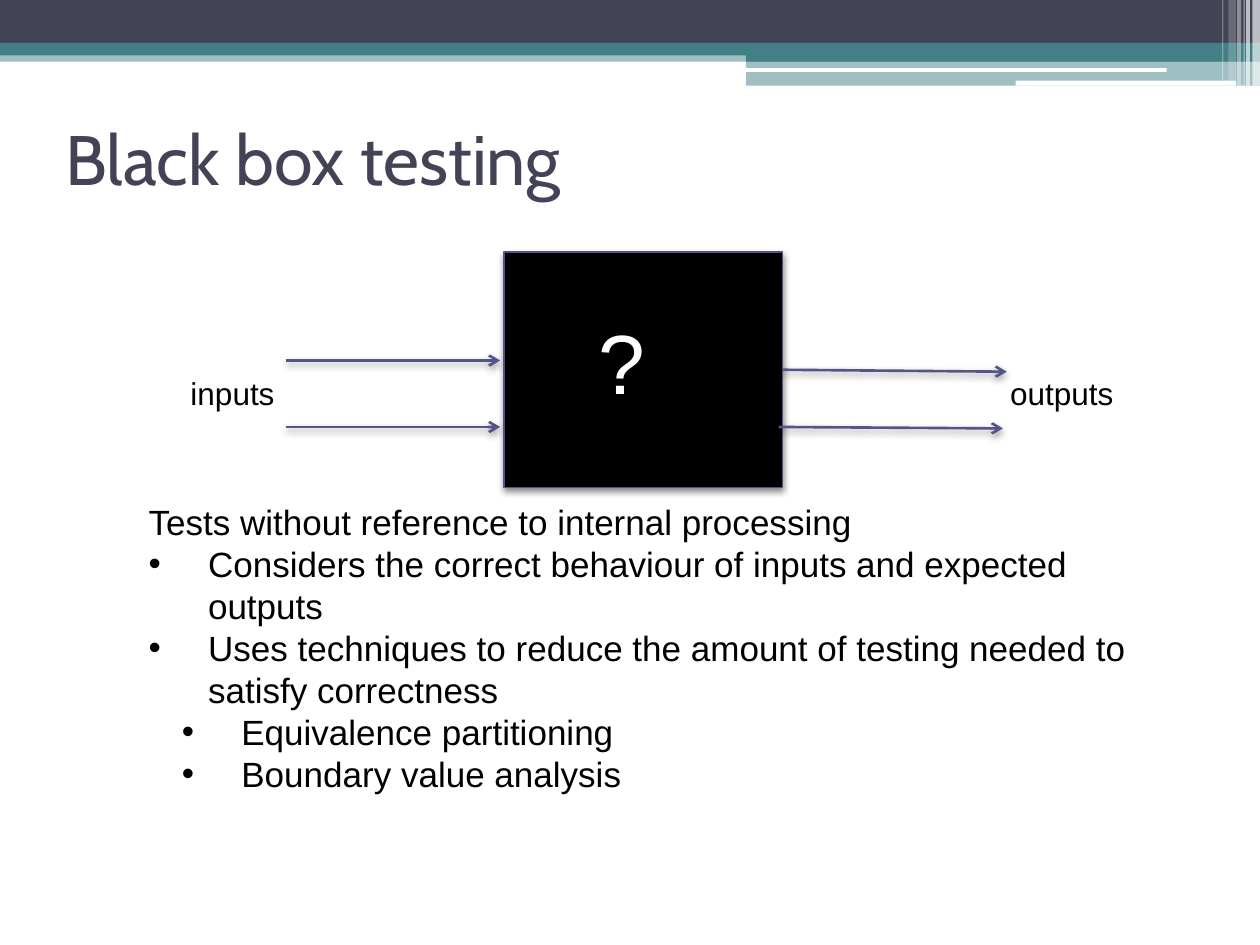
from lxml import etree
from pptx import Presentation
from pptx.dml.color import RGBColor
from pptx.enum.shapes import MSO_CONNECTOR, MSO_SHAPE
from pptx.enum.text import MSO_ANCHOR, PP_ALIGN
from pptx.oxml.ns import qn
from pptx.util import Pt

RECTANGLE, ROUNDED = MSO_SHAPE.RECTANGLE, MSO_SHAPE.ROUNDED_RECTANGLE
STRAIGHT = MSO_CONNECTOR.STRAIGHT
LEFT, CENTER = PP_ALIGN.LEFT, PP_ALIGN.CENTER
MIDDLE = MSO_ANCHOR.MIDDLE
RIGHT_SIDE = 3
NAVY, TEAL, VIOLET, WHITE, BLACK = "424456", "438086", "53548A", "FFFFFF", "000000"


def color(value):
    """Return the colour for a hex string."""
    return RGBColor.from_string(value)


def add_block(slide, box, fill, opacity=100, kind=RECTANGLE):
    """Add a borderless shape, translucent when opacity is below 100."""
    shape = slide.shapes.add_shape(kind, *map(Pt, box))
    shape.shadow.inherit = False
    shape.fill.solid()
    shape.fill.fore_color.rgb = color(fill)
    shape.line.fill.background()
    if opacity < 100:
        tone = shape.fill._xPr.find(".//" + qn("a:srgbClr"))
        etree.SubElement(tone, qn("a:alpha"), val=str(opacity * 1000))
    return shape


def add_shadow(shape, opacity, blur):
    """Give a shape or connector a soft shadow straight below it."""
    properties = shape._element.spPr
    for effects in properties.findall(qn("a:effectLst")):
        properties.remove(effects)
    effects = etree.SubElement(properties, qn("a:effectLst"))
    shadow = etree.SubElement(effects, qn("a:outerShdw"), blurRad=str(Pt(blur)),
                              dist=str(Pt(2)), dir="5400000", rotWithShape="0")
    tone = etree.SubElement(shadow, qn("a:srgbClr"), val=BLACK)
    etree.SubElement(tone, qn("a:alpha"), val=str(opacity * 1000))


def add_run(paragraph, text, size, fill=BLACK, font="Arial"):
    """Add one formatted run to a paragraph."""
    run = paragraph.add_run()
    run.text = text
    run.font.size = Pt(size)
    run.font.name = font
    run.font.color.rgb = color(fill)


def add_label(slide, box, text, size, fill=BLACK, align=LEFT):
    """Add a one-line text box."""
    frame = slide.shapes.add_textbox(*map(Pt, box)).text_frame
    frame.word_wrap = True
    frame.paragraphs[0].alignment = align
    add_run(frame.paragraphs[0], text, size, fill)


def add_arrow(slide, start, end, source=None):
    """Add an arrow, joined to the right side of a source shape if given."""
    arrow = slide.shapes.add_connector(STRAIGHT, *map(Pt, start + end))
    if source is not None:
        arrow.begin_connect(source, RIGHT_SIDE)
    arrow.line.color.rgb = color(VIOLET)
    arrow.line.width = Pt(1.5)
    etree.SubElement(arrow.line._get_or_add_ln(), qn("a:tailEnd"), type="arrow")
    add_shadow(arrow, 40, 4.1)


def add_header(slide, box):
    """Draw the banded header with its step and vertical stripes."""
    left, top, width, height = box
    step = left + 426.2
    right = left + width
    add_block(slide, (left, top + 28.8, width, 6.5), TEAL, 50)
    add_block(slide, (left, top, width, 24.5), NAVY)
    add_block(slide, (left, top + 24.5, width, 7.2), TEAL)
    add_block(slide, (step, top + 28, right - step, 7.2), TEAL)
    add_block(slide, (step, top + 34.6, right - step, 14.4), TEAL, 50)
    add_block(slide, (left + 425.5, top + 38.9, 241.2, 2.2), WHITE, kind=ROUNDED)
    add_block(slide, (left + 580.3, top + 46.1, 126, 2.9), WHITE, kind=ROUNDED)
    stripes = [(4.3, 4.3, 0, 65), (7.9, 2.2, 0, 65), (9.4, 0.7, 0, 60),
               (13, 2.2, 0, 40), (18, 4.3, 2.9, 20), (21.6, 0.7, 2.9, 30)]
    for offset, stripe_width, gap, opacity in stripes:
        add_block(slide, (right - offset, top, stripe_width, height - gap), WHITE, opacity)


def add_title(slide, box, text):
    """Place and format the title placeholder."""
    title = slide.shapes.title
    title.left, title.top, title.width, title.height = map(Pt, box)
    title.text_frame.vertical_anchor = MIDDLE
    paragraph = title.text_frame.paragraphs[0]
    paragraph.alignment = LEFT
    add_run(paragraph, text, 40, NAVY, "Cabin")


def add_diagram(slide, box):
    """Draw the black box with its inputs and outputs."""
    left, top, width, height = box
    black_box = add_block(slide, (left + 198, top, 159.1, height), BLACK)
    black_box.line.color.rgb = color(VIOLET)
    black_box.line.width = Pt(0.75)
    add_shadow(black_box, 45, 4)
    add_label(slide, (left + 226, top + 30.2, 79.2, 69.8), "?", 48, WHITE, CENTER)
    add_label(slide, (left, top + 66.2, 85.7, 28.8), "inputs", 18, align=CENTER)
    add_label(slide, (left + width - 108, top + 66.2, 108, 28.8), "outputs", 18)
    for offset in (62, 100):
        add_arrow(slide, (left + 73.4, top + offset), (left + 195.8, top + offset))
    add_arrow(slide, (left + 357.1, top + 67.3), (left + 485.3, top + 68.4), black_box)
    add_arrow(slide, (left + 355, top + 100), (left + 483.1, top + 100.8))


def add_notes_text(slide, box, lines):
    """Write paragraphs given as (level, text); level None has no bullet."""
    frame = slide.shapes.add_textbox(*map(Pt, box)).text_frame
    frame.word_wrap = True
    for index, (level, text) in enumerate(lines):
        paragraph = frame.add_paragraph() if index else frame.paragraphs[0]
        add_run(paragraph, text, 20)
        if level is not None:
            paragraph.level = level
            properties = paragraph._p.get_or_add_pPr()
            properties.set("marL", str(Pt(34 + 19 * level)))
            properties.set("indent", str(-Pt(34)))
            etree.SubElement(properties, qn("a:buFont"), typeface="Arial")
            etree.SubElement(properties, qn("a:buChar"), char="•")


def main():
    """Build and save the slide."""
    presentation = Presentation()
    presentation.slide_width, presentation.slide_height = Pt(720), Pt(540)
    slide = presentation.slides.add_slide(presentation.slide_layouts[5])
    add_header(slide, (0, 0, 720, 49))
    add_title(slide, (30.2, 48.2, 648, 84.2), "Black box testing")
    add_diagram(slide, (90, 144, 588.2, 134.6))
    add_notes_text(slide, (77.8, 282.2, 581.8, 220.3), [
        (None, "Tests without reference to internal processing"),
        (0, "Considers the correct behaviour of inputs and expected outputs"),
        (0, "Uses techniques to reduce the amount of testing needed to satisfy correctness"),
        (1, "Equivalence partitioning"),
        (1, "Boundary value analysis"),
    ])
    presentation.save("out.pptx")


if __name__ == "__main__":
    main()
